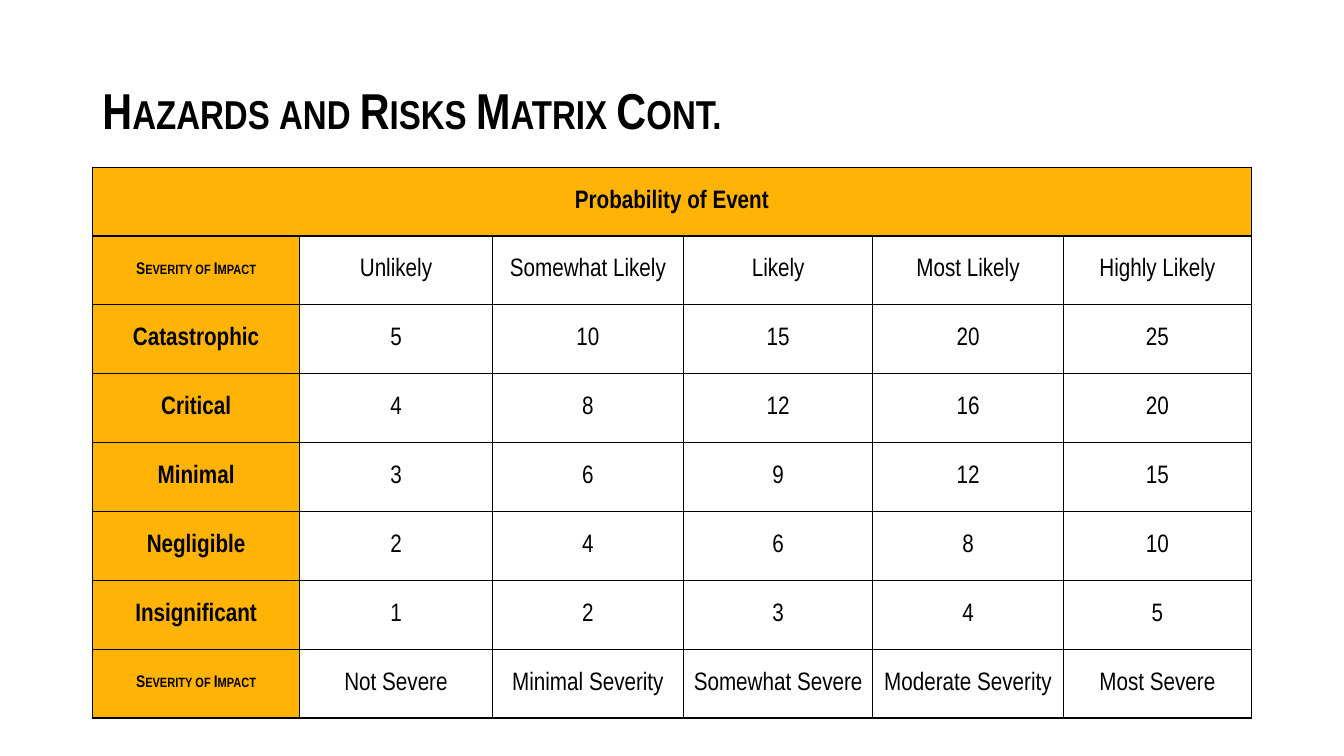
"""Build the hazards and risks matrix slide."""
from dataclasses import dataclass

from lxml import etree
from pptx import Presentation
from pptx import util as u
from pptx.dml.color import RGBColor
from pptx.enum import text
from pptx.oxml.ns import qn

PX = 7620
FONT = "Arial Narrow"
COLORS = {"ink": "000000", "header": "FFB305", "body": "FFFFFF"}
COLUMN_WIDTHS = (247, 229, 228, 225, 227, 224)
ROW_HEIGHT = 82
CELL_INSET = 8
SEVERITIES = ("Catastrophic", "Critical", "Minimal", "Negligible", "Insignificant")
PROBABILITIES = ("Unlikely", "Somewhat Likely", "Likely", "Most Likely", "Highly Likely")
IMPACTS = ("Not Severe", "Minimal Severity", "Somewhat Severe", "Moderate Severity", "Most Severe")


@dataclass(frozen=True)
class CellStyle:
    fill: str
    size: int = 18
    bold: bool = False
    small_caps: bool = False
    spacing: int = 6


BANNER = CellStyle("header", bold=True, spacing=0)
AXIS = CellStyle("header", size=12, bold=True, small_caps=True, spacing=0)
SEVERITY = CellStyle("header", bold=True)
VALUE = CellStyle("body")


def px(length: int) -> u.Emu:
    return u.Emu(length * PX)


def add_run(paragraph, words: str, size: int, bold: bool, small_caps: bool) -> None:
    run = paragraph.add_run()
    run.text = words
    run.font.name = FONT
    run.font.size = u.Pt(size)
    run.font.bold = bold
    run.font.color.rgb = RGBColor.from_string(COLORS["ink"])
    if small_caps:
        run._r.get_or_add_rPr().set("cap", "small")


def add_borders(cell) -> None:
    properties = cell._tc.get_or_add_tcPr()
    for position, side in enumerate(("lnL", "lnR", "lnT", "lnB")):
        border = etree.Element(qn(f"a:{side}"), w=str(u.Pt(1)))
        solid = etree.SubElement(border, qn("a:solidFill"))
        etree.SubElement(solid, qn("a:srgbClr"), val=COLORS["ink"])
        properties.insert(position, border)


def format_cell(cell, style: CellStyle) -> None:
    cell.fill.solid()
    cell.fill.fore_color.rgb = RGBColor.from_string(COLORS[style.fill])
    cell.vertical_anchor = text.MSO_ANCHOR.MIDDLE
    cell.margin_left = cell.margin_right = px(CELL_INSET)
    cell.margin_top = cell.margin_bottom = 0
    add_borders(cell)


def write_cell(cell, words: str, style: CellStyle) -> None:
    paragraph = cell.text_frame.paragraphs[0]
    paragraph.alignment = text.PP_ALIGN.CENTER
    paragraph.space_before = paragraph.space_after = u.Pt(style.spacing)
    add_run(paragraph, words, style.size, style.bold, style.small_caps)


def add_title(slide, words: str) -> None:
    title = slide.shapes.title
    title.left, title.top, title.width, title.height = map(px, (110, 48, 1380, 174))
    frame = title.text_frame
    frame.auto_size = text.MSO_AUTO_SIZE.NONE
    frame.vertical_anchor = text.MSO_ANCHOR.MIDDLE
    heading = frame.paragraphs[0]
    heading.alignment = text.PP_ALIGN.LEFT
    heading.line_spacing = 0.9
    add_run(heading, words, 36, True, True)


def matrix_rows() -> list[tuple[CellStyle, tuple[str, ...]]]:
    scores = [
        (SEVERITY, (severity, *(str(weight * step) for step in range(1, 6))))
        for weight, severity in zip(range(5, 0, -1), SEVERITIES)
    ]
    axis = "Severity of Impact"
    return [(AXIS, (axis, *PROBABILITIES)), *scores, (AXIS, (axis, *IMPACTS))]


def add_matrix(slide) -> None:
    rows = matrix_rows()
    row_count = len(rows) + 1
    matrix = slide.shapes.add_table(
        row_count, len(COLUMN_WIDTHS), px(110), px(199),
        px(sum(COLUMN_WIDTHS)), px(ROW_HEIGHT * row_count),
    ).table
    matrix.first_row = matrix.horz_banding = False
    for column, width in zip(matrix.columns, COLUMN_WIDTHS):
        column.width = px(width)
    for row in matrix.rows:
        row.height = px(ROW_HEIGHT)
    for column in range(len(COLUMN_WIDTHS)):
        format_cell(matrix.cell(0, column), BANNER)
    banner = matrix.cell(0, 0)
    banner.merge(matrix.cell(0, len(COLUMN_WIDTHS) - 1))
    write_cell(banner, "Probability of Event", BANNER)
    for row, (label_style, entries) in enumerate(rows, start=1):
        for column, words in enumerate(entries):
            style = VALUE if column else label_style
            cell = matrix.cell(row, column)
            format_cell(cell, style)
            write_cell(cell, words, style)


def main() -> None:
    deck = Presentation()
    deck.slide_width, deck.slide_height = px(1600), px(900)
    slide = deck.slides.add_slide(deck.slide_layouts[5])
    add_title(slide, "Hazards and Risks Matrix Cont.")
    add_matrix(slide)
    deck.save("out.pptx")


if __name__ == "__main__":
    main()
